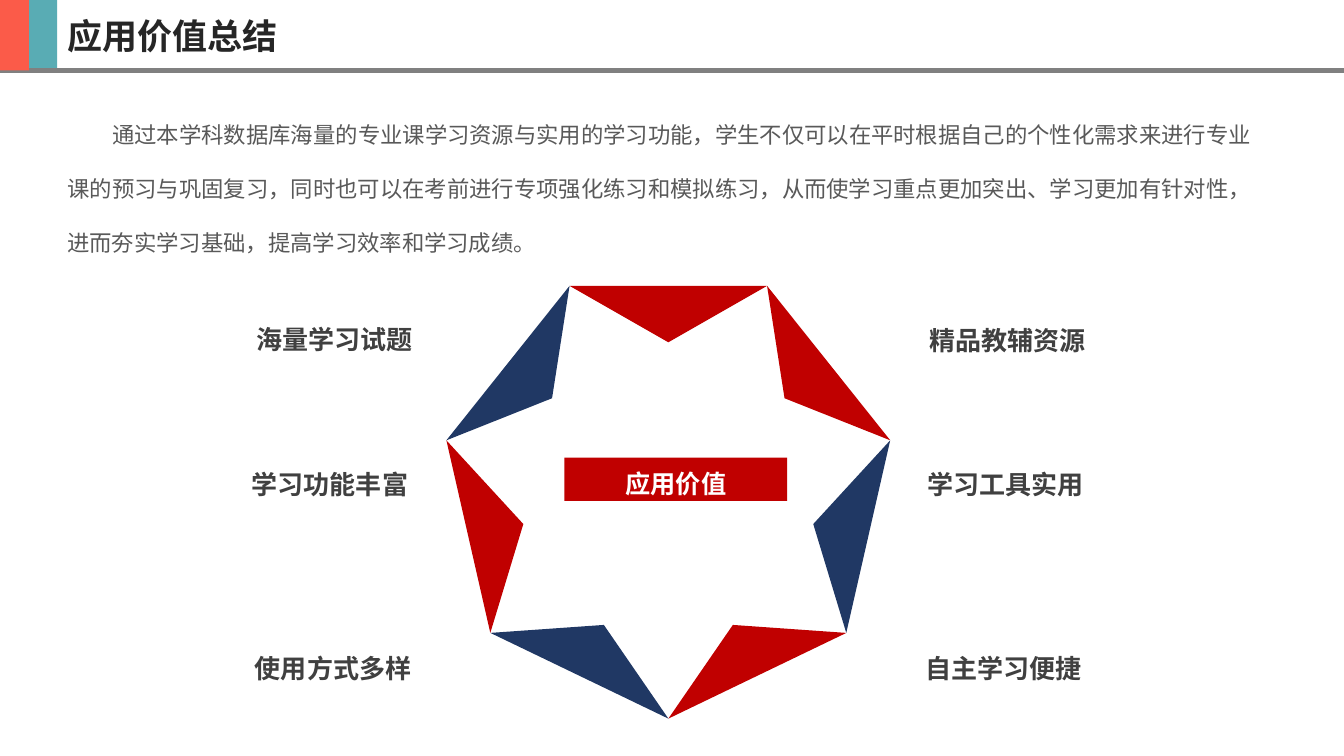
from math import cos, pi, sin

from lxml.etree import SubElement
from pptx import Presentation
from pptx.dml.color import RGBColor
from pptx.enum.shapes import MSO_CONNECTOR, MSO_SHAPE
from pptx.enum.text import MSO_ANCHOR, PP_ALIGN
from pptx.oxml.ns import qn
from pptx.util import Pt

RED, NAVY = "C00000", "203864"
CORAL, TEAL, GRAY = "FB5B49", "59ACB4", "808080"

TITLE = "应用价值总结"
SUMMARY = (
    "通过本学科数据库海量的专业课学习资源与实用的学习功能，"
    "学生不仅可以在平时根据自己的个性化需求来进行专业课的预习与巩固复习，"
    "同时也可以在考前进行专项强化练习和模拟练习，"
    "从而使学习重点更加突出、学习更加有针对性，"
    "进而夯实学习基础，提高学习效率和学习成绩。"
)
CENTER_LABEL = "应用价值"
# wording, left, top, alignment
BENEFITS = [
    ("海量学习试题", 120.2, 223.2, PP_ALIGN.RIGHT),
    ("精品教辅资源", 601.2, 223.9, PP_ALIGN.RIGHT),
    ("学习功能丰富", 172.8, 326.9, PP_ALIGN.LEFT),
    ("学习工具实用", 599.8, 326.9, PP_ALIGN.RIGHT),
    ("使用方式多样", 175, 457.9, PP_ALIGN.LEFT),
    ("自主学习便捷", 653.8, 457.9, PP_ALIGN.LEFT),
]
# clockwise from the top side of the heptagon
BLADE_COLORS = [RED, RED, NAVY, RED, NAVY, RED, NAVY]

SLIDE_W, SLIDE_H = 960, 540
HEADER_H = 50.4
STRIPE_W = 20.6
RING_X, RING_Y, RING_R = 477.4, 350.7, 162.6
BLADE_DEPTH = 40.3


def rgb(color):
    return RGBColor.from_string(color)


def paint(shape, color):
    shape.shadow.inherit = False
    shape.fill.solid()
    shape.fill.fore_color.rgb = rgb(color)
    shape.line.fill.background()


def add_block(slide, left, top, width, height, color):
    block = slide.shapes.add_shape(
        MSO_SHAPE.RECTANGLE, Pt(left), Pt(top), Pt(width), Pt(height))
    paint(block, color)
    return block


def write(shape, wording, size, color, font="Arial", bold=True,
          align=PP_ALIGN.LEFT, spacing=1.2, indent=0):
    frame = shape.text_frame
    frame.word_wrap = True
    frame.vertical_anchor = MSO_ANCHOR.TOP
    paragraph = frame.paragraphs[0]
    paragraph.alignment = align
    paragraph.line_spacing = spacing
    if indent:
        paragraph._p.get_or_add_pPr().set("indent", str(Pt(indent)))
    run = paragraph.add_run()
    run.text = wording
    run.font.name = font
    run.font.size = Pt(size)
    run.font.bold = bold
    run.font.color.rgb = rgb(color)
    SubElement(run._r.get_or_add_rPr(), qn("a:ea")).set("typeface", font)


def add_text(slide, left, top, width, height, *content, **style):
    box = slide.shapes.add_textbox(Pt(left), Pt(top), Pt(width), Pt(height))
    write(box, *content, **style)


def ring_point(radius, step):
    """Point at a number of seventh turns clockwise from the top."""
    angle = step * 2 * pi / len(BLADE_COLORS)
    return (Pt(RING_X + radius * sin(angle)),
            Pt(RING_Y - radius * cos(angle)))


def add_blades(slide):
    inner_radius = RING_R * cos(pi / len(BLADE_COLORS)) - BLADE_DEPTH
    for side, color in enumerate(BLADE_COLORS):
        outline = slide.shapes.build_freeform(*ring_point(RING_R, side - 0.5))
        outline.add_line_segments([ring_point(RING_R, side + 0.5),
                                   ring_point(inner_radius, side)])
        paint(outline.convert_to_shape(), color)


def add_header(slide):
    add_block(slide, 20.2, 0, STRIPE_W, HEADER_H, TEAL)
    rule = slide.shapes.add_connector(
        MSO_CONNECTOR.STRAIGHT, Pt(0), Pt(HEADER_H), Pt(SLIDE_W), Pt(HEADER_H))
    rule.line.color.rgb = rgb(GRAY)
    rule.line.width = Pt(3)
    SubElement(rule._element.spPr, qn("a:effectLst"))
    add_text(slide, 41, 6.5, 178.6, 37.4, TITLE, 25, "262626",
             font="Noto Sans CJK JP", spacing=1)
    add_block(slide, 0, 0, STRIPE_W, HEADER_H, CORAL)


def main():
    deck = Presentation()
    deck.slide_width, deck.slide_height = Pt(SLIDE_W), Pt(SLIDE_H)
    slide = deck.slides.add_slide(deck.slide_layouts[6])

    banner = add_block(slide, 403.2, 326.9, 159.1, 31, RED)
    write(banner, CENTER_LABEL, 18, "FFFFFF", align=PP_ALIGN.CENTER)
    add_blades(slide)
    for wording, left, top, align in BENEFITS:
        add_text(slide, left, top, 181.4, 31.7, wording, 18.6, "404040",
                 align=align)
    add_text(slide, 41, 64.1, 860.4, 118.1, SUMMARY, 16, "595959",
             font="Noto Sans CJK SC", bold=False, align=PP_ALIGN.JUSTIFY,
             spacing=2, indent=32)
    add_header(slide)
    deck.save("out.pptx")


if __name__ == "__main__":
    main()
